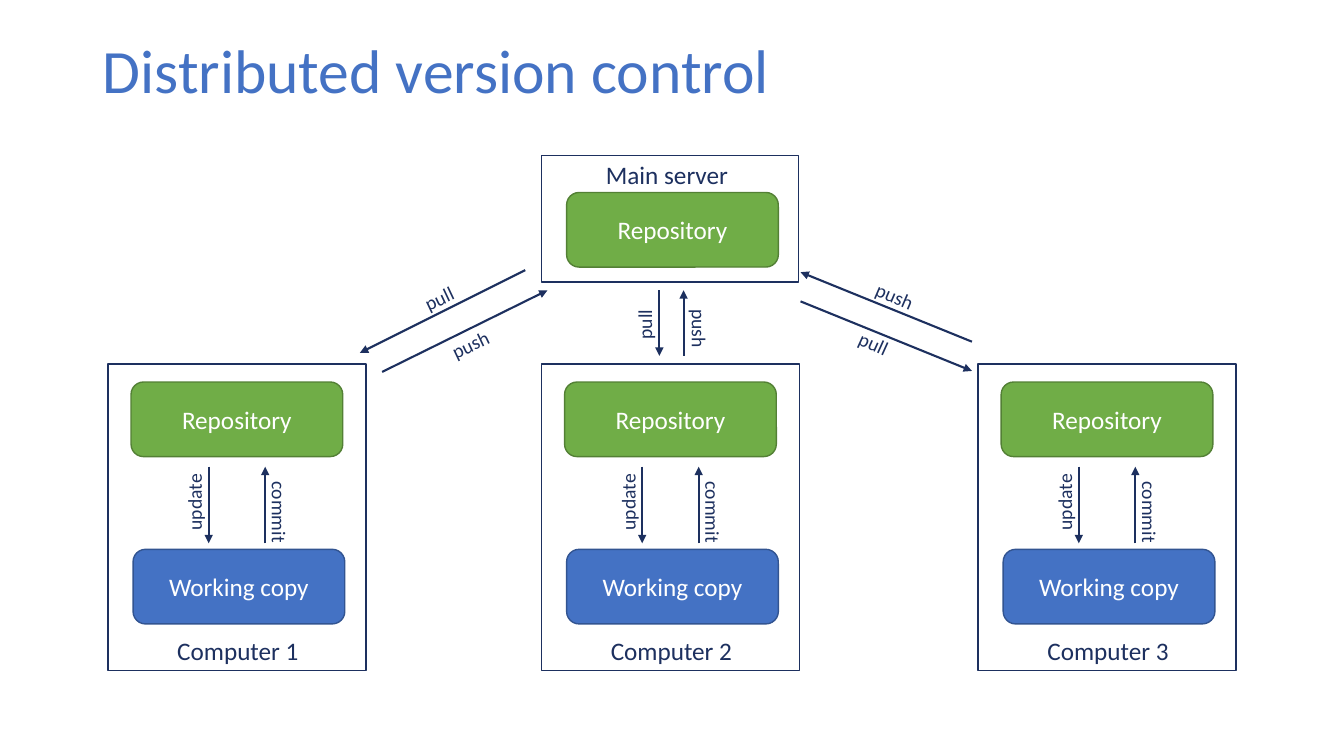
from lxml import etree
from pptx import Presentation
from pptx import util as u
from pptx.dml.color import RGBColor
from pptx.enum import shapes, text
from pptx.oxml.ns import qn

# Grid: columns and rows of a tenth of an inch
UNIT = u.Inches(0.1)
COLORS = {
    "title": "4472C4", "ink": "1D305F", "white": "FFFFFF",
    "repo": "70AD47", "repo_edge": "538035",
    "work": "4472C4", "work_edge": "325491",
}
FONT = "Calibri"
CENTER, LEFT = text.PP_ALIGN.CENTER, text.PP_ALIGN.LEFT
TOP, MIDDLE = text.MSO_ANCHOR.TOP, text.MSO_ANCHOR.MIDDLE


def grid(*cells):
    return [round(c * UNIT) for c in cells]


def color(name):
    return RGBColor.from_string(COLORS[name])


def write(sp, words, size, ink, align=CENTER, anchor=TOP):
    tf = sp.text_frame
    tf.word_wrap = True
    tf.vertical_anchor = anchor
    tf.text = words
    p = tf.paragraphs[0]
    p.alignment = align
    r = p.runs[0]
    r.font.name, r.font.size = FONT, u.Pt(size)
    r.font.color.rgb = color(ink)
    return p


def add_label(slide, words, col, row, width, height=3.4, size=14,
              rotation=0, align=CENTER):
    sp = slide.shapes.add_textbox(*grid(col, row, width, height))
    sp.rotation = rotation
    write(sp, words, size, "ink", align)


def add_frame(slide, col, row, width, height):
    sp = slide.shapes.add_shape(shapes.MSO_SHAPE.RECTANGLE,
                                *grid(col, row, width, height))
    sp.shadow.inherit = False
    sp.fill.background()
    sp.line.color.rgb = color("ink")
    sp.line.width = u.Pt(1)


def add_store(slide, words, kind, col, row):
    sp = slide.shapes.add_shape(shapes.MSO_SHAPE.ROUNDED_RECTANGLE,
                                *grid(col, row, 21, 7.4))
    sp.shadow.inherit = False
    sp.fill.solid()
    sp.fill.fore_color.rgb = color(kind)
    sp.line.color.rgb = color(kind + "_edge")
    sp.line.width = u.Pt(1)
    write(sp, words, 18, "white", anchor=MIDDLE)


def add_arrow(slide, col1, row1, col2, row2):
    line = slide.shapes.add_connector(shapes.MSO_CONNECTOR.STRAIGHT,
                                      *grid(col1, row1, col2, row2))
    line.line.color.rgb = color("ink")
    line.line.width = u.Pt(1.5)
    etree.SubElement(line.line._get_or_add_ln(), qn("a:tailEnd"), type="triangle")
    etree.SubElement(line._element.spPr, qn("a:effectLst"))


def add_title(slide, words):
    sp = slide.shapes.add_textbox(*grid(9.2, 0, 115, 14.5))
    write(sp, words, 44, "title", LEFT, MIDDLE).line_spacing = 0.9


def add_server(slide):
    add_frame(slide, 53.7, 15.4, 25.5, 12.6)
    add_store(slide, "Repository", "repo", 56.2, 19.1)
    add_label(slide, "Main server", 55.9, 15.3, 20.5, 3.8, size=18)


def add_computer(slide, number, col):
    add_frame(slide, col, 36.1, 25.6, 30.4)
    add_store(slide, "Repository", "repo", col + 2.3, 37.9)
    add_store(slide, "Working copy", "work", col + 2.5, 54.5)
    add_label(slide, f"Computer {number}", col + 4.9, 62.5, 16, 4, size=18)
    # Traffic between repository and working copy
    add_arrow(slide, col + 10, 46.3, col + 10, 53.9)
    add_arrow(slide, col + 15.6, 53.9, col + 15.6, 46.3)
    add_label(slide, "update", col + 4.1, 47.4, 9, rotation=270, align=LEFT)
    add_label(slide, "commit", col + 12.5, 49.6, 9, rotation=90, align=LEFT)


def main():
    prs = Presentation()
    prs.slide_width, prs.slide_height = u.Inches(13.33), u.Inches(7.5)
    slide = prs.slides.add_slide(prs.slide_layouts[6])

    add_title(slide, "Distributed version control")
    add_server(slide)
    for number, col in enumerate((10.7, 53.7, 97), start=1):
        add_computer(slide, number, col)

    # Traffic with the server: arrow ends, then label place and turn
    for word, ends, col, row, width, turn in (
        ("pull", (52.1, 26.8, 35.7, 35), 38.1, 27.9, 10.9, 334.7),
        ("push", (37.9, 36.9, 54.3, 28.8), 41.2, 32.5, 10.9, 334.7),
        ("pull", (65.4, 28.8, 65.4, 35.3), 58.5, 30.5, 10.9, 270),
        ("push", (67.8, 35.3, 67.8, 28.8), 64.6, 30.9, 9.5, 90),
        ("pull", (79.4, 29.9, 96.4, 36.8), 81.2, 32.4, 10.9, 24.3),
        ("push", (96.4, 33.9, 79.4, 27), 83.3, 27.7, 10.9, 23.2),
    ):
        add_arrow(slide, *ends)
        add_label(slide, word, col, row, width, rotation=turn)

    prs.save("out.pptx")


if __name__ == "__main__":
    main()
